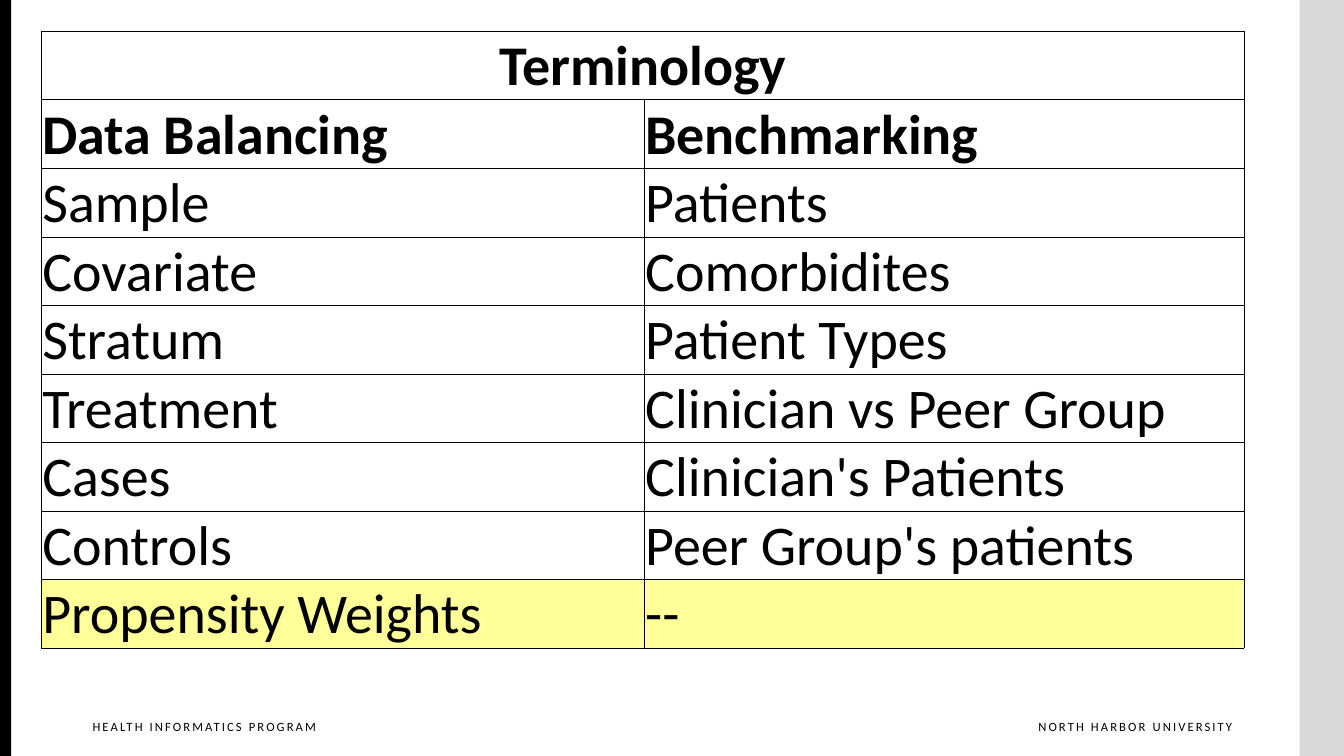
from dataclasses import dataclass

from pptx import Presentation
from pptx.dml.color import RGBColor
from pptx.enum.shapes import MSO_SHAPE as Shape
from pptx.enum.text import MSO_ANCHOR as Anchor, PP_ALIGN as Align
from pptx.oxml import parse_xml
from pptx.oxml.ns import nsdecls
from pptx.util import Pt

PX = 9144  # 100 px to the inch
WIDTH, HEIGHT = 1333, 750


@dataclass(frozen=True)
class Theme:
    font: str = "Calibri"
    ink: str = "000000"
    band: str = "D9D9D9"
    highlight: str = "FFFF99"
    table_size: int = 40
    footer_size: int = 9
    footer_spacing: float = 1.5
    border: float = 0.5


THEME = Theme()

TITLE = "Terminology"
HEADINGS = ("Data Balancing", "Benchmarking")
TERMS = [
    ("Sample", "Patients"),
    ("Covariate", "Comorbidites"),
    ("Stratum", "Patient Types"),
    ("Treatment", "Clinician vs Peer Group"),
    ("Cases", "Clinician's Patients"),
    ("Controls", "Peer Group's patients"),
    ("Propensity Weights", "--"),
]


def scaled(*lengths):
    return [length * PX for length in lengths]


def add_run(paragraph, text, size, bold=False):
    run = paragraph.add_run()
    run.text = text
    run.font.name = THEME.font
    run.font.size = Pt(size)
    run.font.bold = bold
    run.font.color.rgb = RGBColor.from_string(THEME.ink)
    return run


def set_margins(target, left, top, right, bottom):
    target.margin_left, target.margin_top = scaled(left, top)
    target.margin_right, target.margin_bottom = scaled(right, bottom)


def add_side_band(slide, box, color):
    shape = slide.shapes.add_shape(Shape.RECTANGLE, *scaled(*box))
    shape.shadow.inherit = False
    shape.fill.solid()
    shape.fill.fore_color.rgb = RGBColor.from_string(color)
    shape.line.fill.background()


def add_footer(slide, box, text, align):
    frame = slide.shapes.add_textbox(*scaled(*box)).text_frame
    frame.word_wrap = True
    set_margins(frame, 10, 5, 0, 5)
    paragraph = frame.paragraphs[0]
    paragraph.alignment = align
    run = add_run(paragraph, text, THEME.footer_size)
    run._r.get_or_add_rPr().set("spc", str(int(THEME.footer_spacing * 100)))


def add_cell_borders(cell):
    properties = cell._tc.get_or_add_tcPr()
    for index, side in enumerate("LRTB"):
        properties.insert(index, parse_xml(
            f'<a:ln{side} {nsdecls("a")} w="{Pt(THEME.border)}"><a:solidFill>'
            f'<a:srgbClr val="{THEME.ink}"/></a:solidFill></a:ln{side}>'))


def fill_cell(cell, text, bold, align, color):
    set_margins(cell, 1, 1, 1, 0)
    cell.vertical_anchor = Anchor.MIDDLE
    if color:
        cell.fill.solid()
        cell.fill.fore_color.rgb = RGBColor.from_string(color)
    else:
        cell.fill.background()
    add_cell_borders(cell)
    if text:
        paragraph = cell.text_frame.paragraphs[0]
        paragraph.alignment = align
        add_run(paragraph, text, THEME.table_size, bold)


def add_terminology_table(slide, box):
    rows = [(TITLE, ""), HEADINGS, *TERMS]
    width, height = box[2:]
    table = slide.shapes.add_table(len(rows), 2, *scaled(*box)).table
    table.first_row = table.horz_banding = False
    left_width = width // 2 + 2
    for column, column_width in zip(table.columns, (left_width, width - left_width)):
        column.width = column_width * PX
    for row in table.rows:
        row.height = height // len(rows) * PX
    table.cell(0, 0).merge(table.cell(0, 1))
    for row_index, texts in enumerate(rows):
        align = Align.CENTER if row_index == 0 else Align.LEFT
        color = THEME.highlight if row_index == len(rows) - 1 else None
        for column_index, text in enumerate(texts):
            fill_cell(table.cell(row_index, column_index), text,
                      row_index < 2, align, color)


def add_frame(slide, box):
    """Place the side bands and footers inside the slide's box."""
    left, top, width, height = box
    right, footer_top = left + width, top + height - 42
    add_side_band(slide, (right - 44, top, 44, height), THEME.band)
    add_side_band(slide, (left, top, 11, height), THEME.ink)
    add_footer(slide, (right - 346, footer_top, 235, 33),
               "NORTH HARBOR UNIVERSITY", Align.RIGHT)
    add_footer(slide, (left + 82, footer_top, 254, 33),
               "HEALTH INFORMATICS PROGRAM", Align.LEFT)


def main():
    presentation = Presentation()
    presentation.slide_width, presentation.slide_height = scaled(WIDTH, HEIGHT)
    slide = presentation.slides.add_slide(presentation.slide_layouts[6])
    add_frame(slide, (0, 0, WIDTH, HEIGHT))
    add_terminology_table(slide, (41, 31, 1193, 612))
    presentation.save("out.pptx")


if __name__ == "__main__":
    main()
